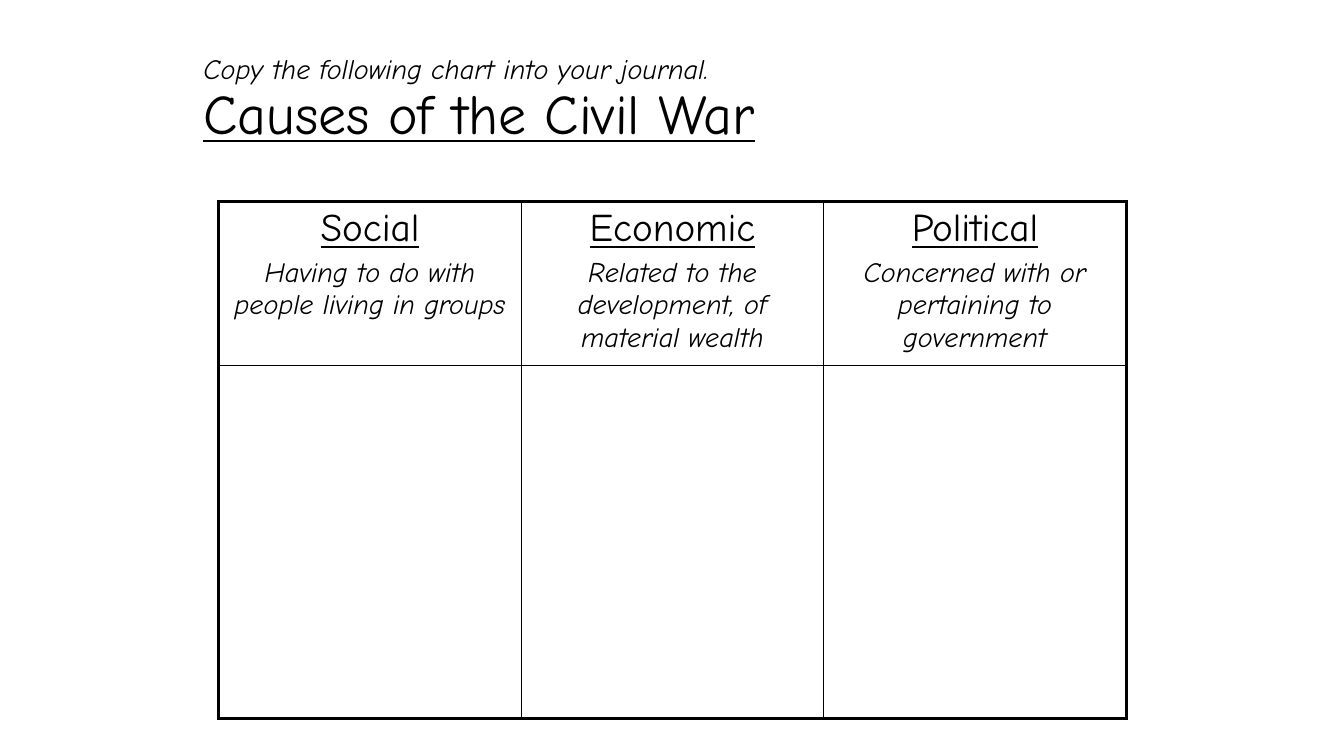
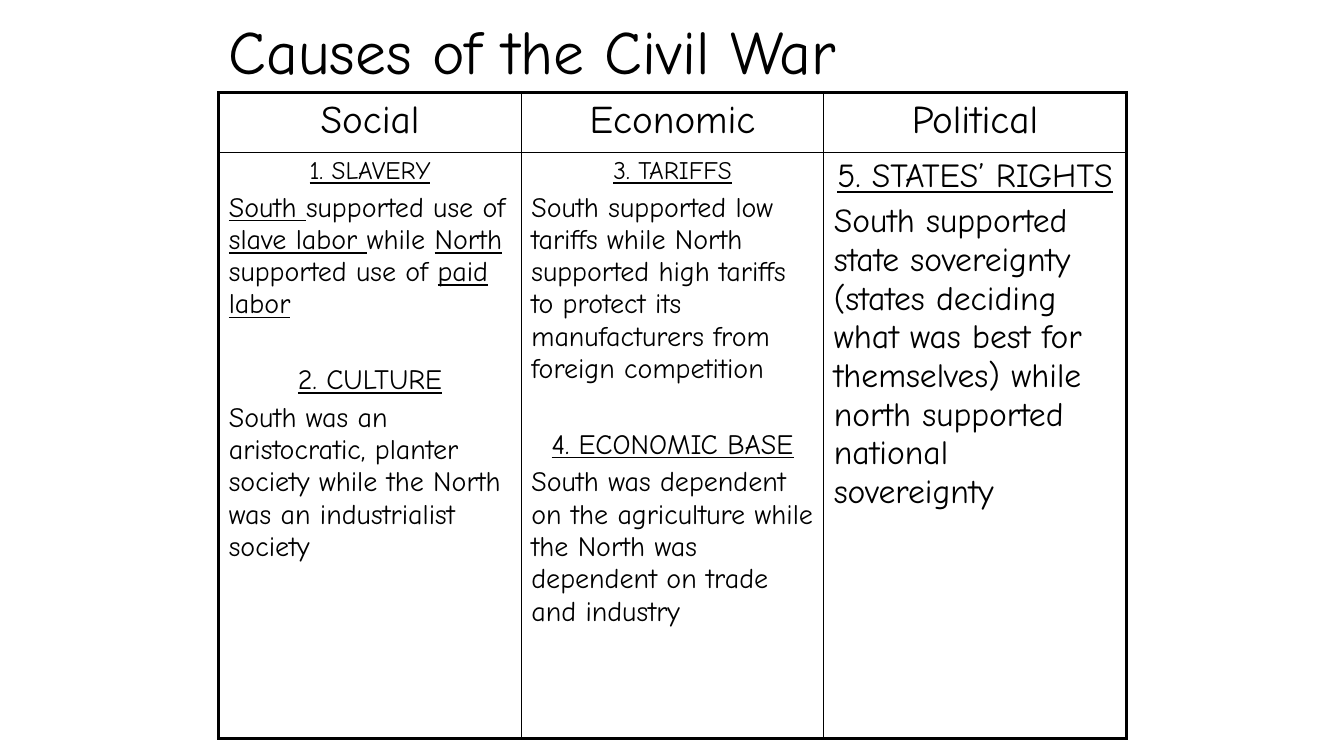
from lxml import etree
from pptx import Presentation
from pptx.dml.color import RGBColor
from pptx.enum.text import MSO_ANCHOR, PP_ALIGN
from pptx.oxml.ns import qn
from pptx.util import Inches, Pt

CENTER, LEFT = PP_ALIGN.CENTER, PP_ALIGN.LEFT
MIDDLE = MSO_ANCHOR.MIDDLE
COLORS = {"ink": "000000"}
FONT = "Comic Neue"
OUTER, INNER = 2.25, 1
TITLE = "Causes of the Civil War"
TABLE_LEFT, COLUMN_WIDTH = 2.17, 3
SECTION_GAP = 31


def span(text, size, underline=False, italic=False):
    return text, size, underline, italic


def line(*spans, align=LEFT, before=None):
    """Describe a paragraph; its space before defaults to a fifth of the text size."""
    return spans, align, spans[0][1] * 0.2 if before is None else before


def heading(text, size, underline=True, before=None):
    return line(span(text, size, underline), align=CENTER, before=before)


class Deck:
    def __init__(self):
        self.deck = Presentation()
        self.deck.slide_width, self.deck.slide_height = Inches(13.33), Inches(7.5)
        self.page = None

    def add_page(self):
        self.page = self.deck.slides.add_slide(self.deck.slide_layouts[6])

    def add_spans(self, para, spans):
        for text, size, underline, italic in spans:
            run = para.add_run()
            run.text = text
            font = run.font
            font.name, font.size = FONT, Pt(size)
            font.underline, font.italic = underline, italic
            font.color.rgb = RGBColor.from_string(COLORS["ink"])

    def title(self, left, top, width, height, *lines):
        box = self.page.shapes.add_textbox(
            Inches(left), Inches(top), Inches(width), Inches(height))
        frame = box.text_frame
        frame.word_wrap = True
        frame.vertical_anchor = MIDDLE
        para = frame.paragraphs[0]
        para.line_spacing = 0.9
        for number, item in enumerate(lines):
            if number:
                para.add_line_break()
            self.add_spans(para, [item])

    def table(self, top, heights, rows):
        """Draw a grid with a heavy frame; each cell is a list of lines."""
        columns = len(rows[0])
        table = self.page.shapes.add_table(
            len(rows), columns, Inches(TABLE_LEFT), Inches(top),
            Inches(COLUMN_WIDTH * columns), Inches(sum(heights))).table
        table.first_row = table.horz_banding = False
        for column in table.columns:
            column.width = Inches(COLUMN_WIDTH)
        for r, (height, row) in enumerate(zip(heights, rows)):
            table.rows[r].height = Inches(height)
            for c, lines in enumerate(row):
                cell = table.cell(r, c)
                self.borders(cell, {"L": c == 0, "R": c == columns - 1,
                                    "T": r == 0, "B": r == len(rows) - 1})
                cell.fill.background()
                self.fill_cell(cell.text_frame, lines)

    def borders(self, cell, edges):
        properties = cell._tc.get_or_add_tcPr()
        for side, is_outer in edges.items():
            border = etree.SubElement(properties, qn(f"a:ln{side}"))
            border.set("w", str(Pt(OUTER if is_outer else INNER)))
            fill = etree.SubElement(border, qn("a:solidFill"))
            etree.SubElement(fill, qn("a:srgbClr")).set("val", COLORS["ink"])

    def fill_cell(self, frame, lines):
        for number, (spans, align, before) in enumerate(lines):
            para = frame.add_paragraph() if number else frame.paragraphs[0]
            para.alignment = align
            para.space_before = Pt(before if number else 0)
            self.add_spans(para, spans)


def chart_to_copy(deck):
    deck.add_page()
    deck.title(1.92, 0, 9.5, 2,
               span("Copy the following chart into your journal.", 20, italic=True),
               span(TITLE, 40, underline=True))
    definitions = {
        "Social": "Having to do with people living in groups",
        "Economic": "Related to the development, of material wealth",
        "Political": "Concerned with or pertaining to government",
    }
    header = [[heading(name, 28), line(span(meaning, 20, italic=True), align=CENTER)]
              for name, meaning in definitions.items()]
    deck.table(2, [1.63, 3.5], [header, [[] for _ in header]])


def completed_chart(deck):
    deck.add_page()
    deck.title(2.17, 0, 9, 1.08, span(TITLE, 44))
    header = [[heading(name, 28, underline=False)]
              for name in ("Social", "Economic", "Political")]
    social = [
        heading("1. SLAVERY", 18),
        line(span("South ", 20, True), span("supported use of ", 20),
             span("slave labor ", 20, True), span("while ", 20),
             span("North", 20, True), span(" supported use of ", 20),
             span("paid labor", 20, True)),
        heading("2. CULTURE", 20, before=SECTION_GAP),
        line(span("South was an aristocratic, planter society while the North "
                  "was an industrialist society", 20)),
    ]
    economic = [
        heading("3. TARIFFS", 18),
        line(span("South supported low tariffs while North supported high tariffs "
                  "to protect its manufacturers from foreign competition", 20)),
        heading("4. ECONOMIC BASE", 20, before=SECTION_GAP),
        line(span("South was dependent on the agriculture while the North was "
                  "dependent on trade and industry", 20)),
    ]
    political = [
        heading("5. STATES’ RIGHTS", 24),
        line(span("South supported state sovereignty (states deciding what was best "
                  "for themselves) while north supported national sovereignty", 24)),
    ]
    deck.table(0.92, [0.59, 5.82], [header, [social, economic, political]])


def main():
    deck = Deck()
    chart_to_copy(deck)
    completed_chart(deck)
    deck.deck.save("out.pptx")


if __name__ == "__main__":
    main()
